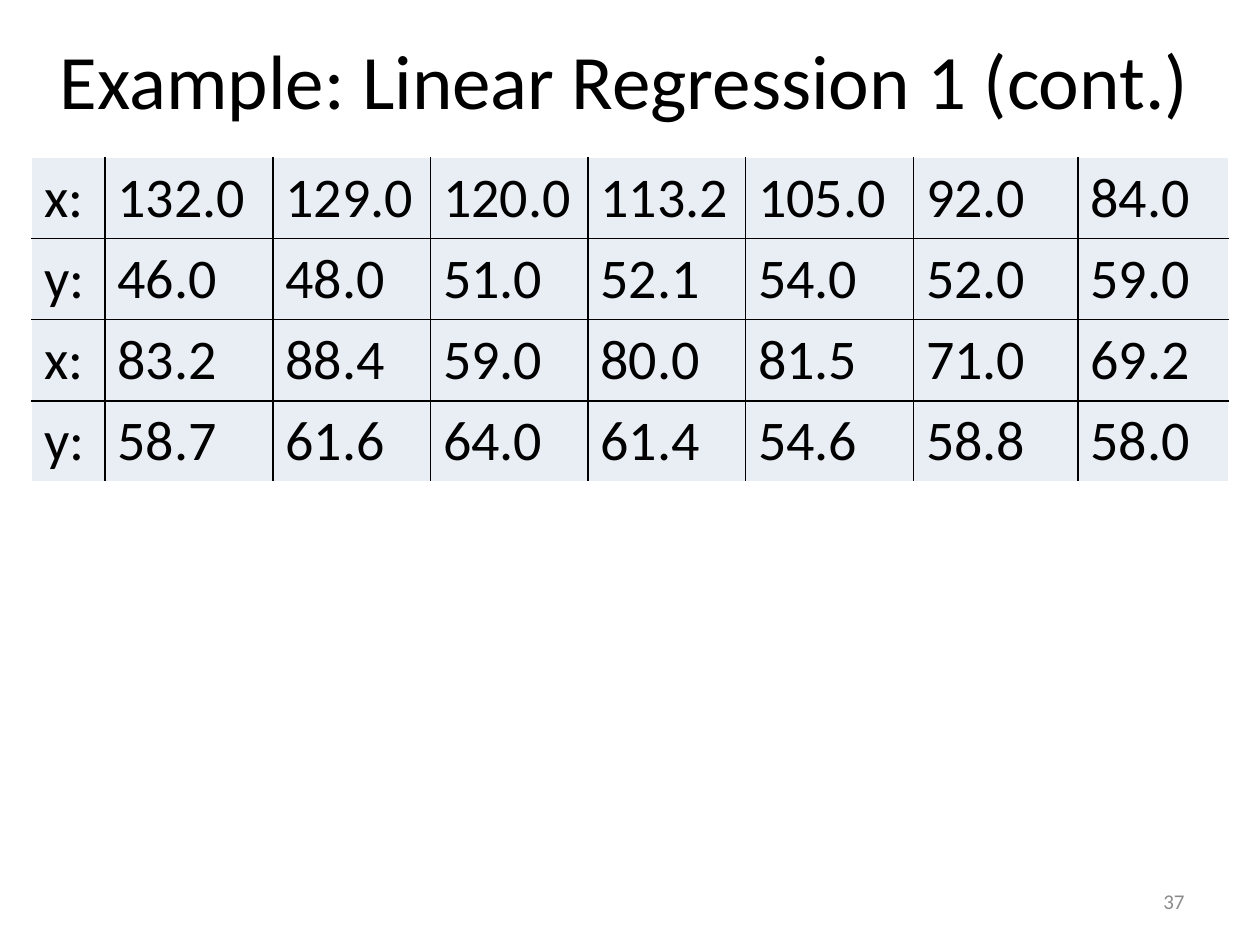
from dataclasses import dataclass

from lxml import etree
from pptx import Presentation
from pptx.dml.color import RGBColor
from pptx.enum.text import MSO_ANCHOR, PP_ALIGN
from pptx.oxml.ns import qn
from pptx.util import Pt

MIDDLE = MSO_ANCHOR.MIDDLE
CENTER, RIGHT = PP_ALIGN.CENTER, PP_ALIGN.RIGHT
TITLE_ONLY = 5


@dataclass(frozen=True)
class Theme:
    font: str = "Calibri"
    text: str = "000000"
    muted: str = "8C8C8C"
    cell: str = "E9EDF4"
    inner: str = "000000"
    outer: str = "FFFFFF"
    title_size: int = 44
    table_size: int = 32
    number_size: int = 12


THEME = Theme()
COLUMN_WIDTHS = [42, 96, 90, 90, 90, 96, 94, 86]
ROWS = [
    ["x:", "132.0", "129.0", "120.0", "113.2", "105.0", "92.0", "84.0"],
    ["y:", "46.0", "48.0", "51.0", "52.1", "54.0", "52.0", "59.0"],
    ["x:", "83.2", "88.4", "59.0", "80.0", "81.5", "71.0", "69.2"],
    ["y:", "58.7", "61.6", "64.0", "61.4", "54.6", "58.8", "58.0"],
]


def write(tf, text, size, color, align=None):
    tf.text = text
    p = tf.paragraphs[0]
    p.alignment = align
    p.font.name = THEME.font
    p.font.size = Pt(size)
    p.font.color.rgb = RGBColor.from_string(color)


def add_title(s, box, text):
    sp = s.shapes.title
    sp.left, sp.top, sp.width, sp.height = map(Pt, box)
    sp.text_frame.vertical_anchor = MIDDLE
    write(sp.text_frame, text, THEME.title_size, THEME.text, CENTER)


def set_borders(cell, colors):
    """Draw 1 pt borders; line elements come before the fill."""
    tc_pr = cell._tc.get_or_add_tcPr()
    for i, (side, color) in enumerate(colors.items()):
        ln = etree.Element(qn(f"a:ln{side}"), w=str(Pt(1)))
        fill = etree.SubElement(ln, qn("a:solidFill"))
        etree.SubElement(fill, qn("a:srgbClr"), val=color)
        tc_pr.insert(i, ln)


def add_data_table(s, box, rows, widths):
    left, top, width, height = map(Pt, box)
    last_row, last_col = len(rows) - 1, len(widths) - 1
    table = s.shapes.add_table(len(rows), len(widths), left, top, width, height).table
    table.first_row = table.horz_banding = False
    for column, w in zip(table.columns, widths):
        column.width = Pt(w)
    for i, row in enumerate(rows):
        for j, value in enumerate(row):
            cell = table.cell(i, j)
            write(cell.text_frame, value, THEME.table_size, THEME.text)
            cell.fill.solid()
            cell.fill.fore_color.rgb = RGBColor.from_string(THEME.cell)
            on_edge = {"L": j == 0, "R": j == last_col, "T": i == 0, "B": i == last_row}
            set_borders(cell, {side: THEME.outer if edge else THEME.inner
                               for side, edge in on_edge.items()})


def add_slide_number(s, box, number):
    tf = s.shapes.add_textbox(*map(Pt, box)).text_frame
    tf.word_wrap = True
    tf.vertical_anchor = MIDDLE
    write(tf, number, THEME.number_size, THEME.muted, RIGHT)


def main():
    prs = Presentation()
    prs.slide_width, prs.slide_height = Pt(720), Pt(540)
    s = prs.slides.add_slide(prs.slide_layouts[TITLE_ONLY])
    add_title(s, (0, 0, 714, 90), "Example: Linear Regression 1 (cont.)")
    add_data_table(s, (18, 90, sum(COLUMN_WIDTHS), 182), ROWS, COLUMN_WIDTHS)
    add_slide_number(s, (516, 500.5, 168, 28.75), "37")
    prs.save("out.pptx")


if __name__ == "__main__":
    main()
